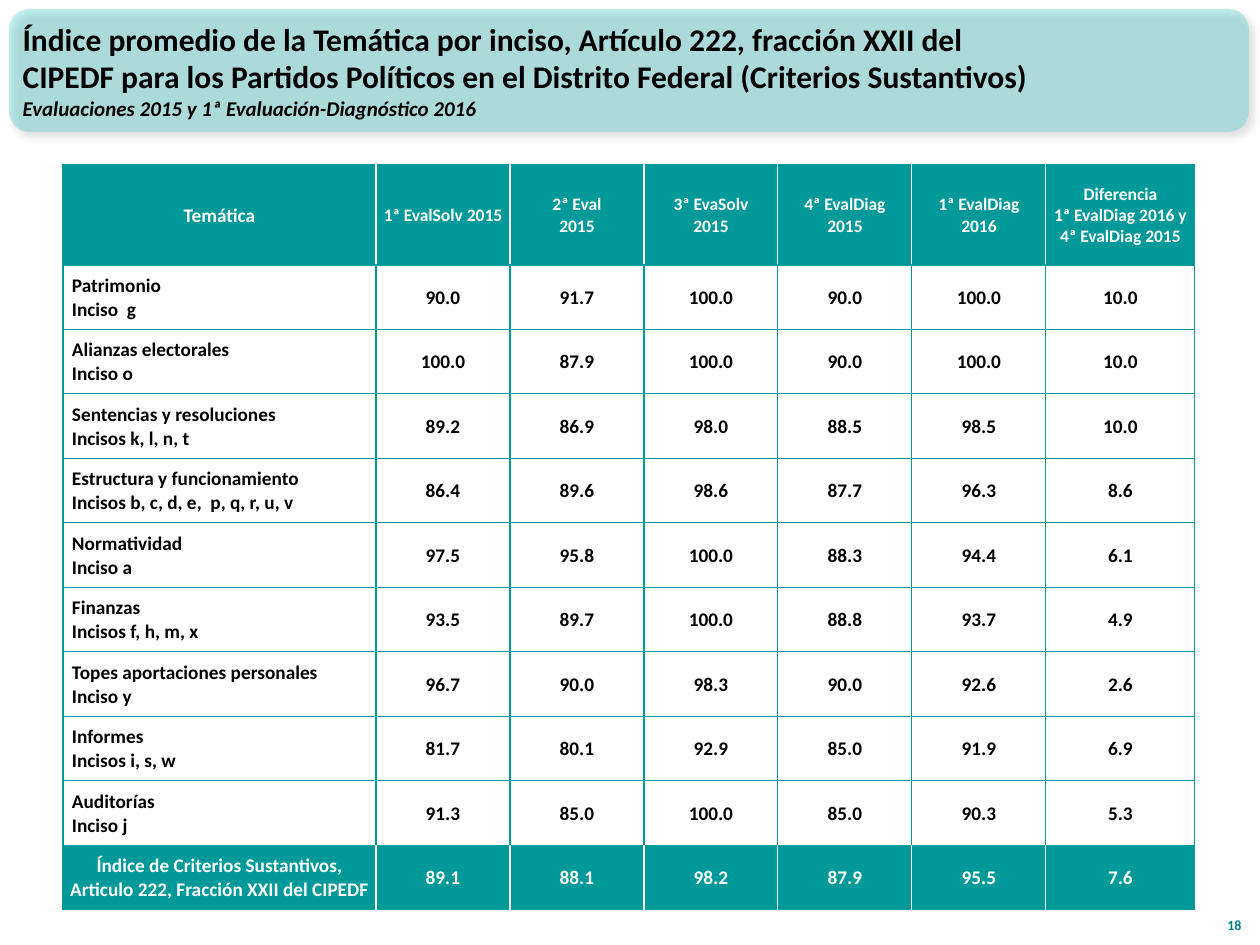
from dataclasses import dataclass

from lxml.etree import SubElement
from pptx import Presentation
from pptx.dml.color import RGBColor
from pptx.enum.shapes import MSO_SHAPE
from pptx.enum.text import MSO_ANCHOR, PP_ALIGN
from pptx.oxml.ns import qn
from pptx.util import Pt

EMU_PER_PX = 914400 / 126


@dataclass(frozen=True)
class Theme:
    font: str = "Calibri"
    teal: str = "009999"
    banner: str = "33CCCC"
    number: str = "008080"
    black: str = "000000"
    white: str = "FFFFFF"
    title_size: int = 18
    subtitle_size: int = 12
    body_size: int = 11
    header_size: int = 10
    number_size: int = 8
    border: float = 0.75


THEME = Theme()

TITLE = ("Índice promedio de la Temática por inciso, Artículo 222, fracción XXII del "
         "CIPEDF para los Partidos Políticos en el Distrito Federal (Criterios Sustantivos)")
SUBTITLE = "Evaluaciones 2015 y 1ª Evaluación-Diagnóstico 2016"

HEADERS = ["Temática", "1ª EvalSolv 2015", "2ª Eval\n2015", "3ª EvaSolv\n2015",
           "4ª EvalDiag\n2015", "1ª EvalDiag\n2016",
           "Diferencia\n1ª EvalDiag 2016 y\n4ª EvalDiag 2015"]
TOPICS = [
    ("Patrimonio\nInciso  g", 90.0, 91.7, 100.0, 90.0, 100.0, 10.0),
    ("Alianzas electorales\nInciso o", 100.0, 87.9, 100.0, 90.0, 100.0, 10.0),
    ("Sentencias y resoluciones\nIncisos k, l, n, t", 89.2, 86.9, 98.0, 88.5, 98.5, 10.0),
    ("Estructura y funcionamiento\nIncisos b, c, d, e,  p, q, r, u, v",
     86.4, 89.6, 98.6, 87.7, 96.3, 8.6),
    ("Normatividad\nInciso a", 97.5, 95.8, 100.0, 88.3, 94.4, 6.1),
    ("Finanzas\nIncisos f, h, m, x", 93.5, 89.7, 100.0, 88.8, 93.7, 4.9),
    ("Topes aportaciones personales\nInciso y", 96.7, 90.0, 98.3, 90.0, 92.6, 2.6),
    ("Informes\nIncisos i, s, w", 81.7, 80.1, 92.9, 85.0, 91.9, 6.9),
    ("Auditorías\nInciso j", 91.3, 85.0, 100.0, 85.0, 90.3, 5.3),
]
TOTAL = ("Índice de Criterios Sustantivos,\nArticulo 222, Fracción XXII del CIPEDF",
         89.1, 88.1, 98.2, 87.9, 95.5, 7.6)


def px(length):
    return round(length * EMU_PER_PX)


def format_paragraph(para, size, color, align, italic=False):
    para.alignment = align
    font = para.font
    font.name, font.size, font.bold, font.italic = THEME.font, Pt(size), True, italic
    font.color.rgb = RGBColor.from_string(color)


def add_banner(page, left, top, width, height):
    """Translucent rounded panel with a soft shadow, and the title over it."""
    panel = page.shapes.add_shape(MSO_SHAPE.ROUNDED_RECTANGLE,
                                  px(left), px(top), px(width), px(height))
    panel.line.fill.background()
    panel.fill.solid()
    panel.fill.fore_color.rgb = RGBColor.from_string(THEME.banner)
    properties = panel._element.spPr
    fill_color = properties.find(qn("a:solidFill")).find(qn("a:srgbClr"))
    SubElement(fill_color, qn("a:alpha"), val="30000")
    effects = SubElement(properties, qn("a:effectLst"))
    shadow = SubElement(effects, qn("a:outerShdw"), blurRad=str(Pt(4)), dist=str(Pt(3)),
                        dir="2700000", algn="tl", rotWithShape="0")
    shadow_color = SubElement(shadow, qn("a:srgbClr"), val=THEME.black)
    SubElement(shadow_color, qn("a:alpha"), val="40000")

    # Title and subtitle share the title placeholder, brought above the panel
    title = page.shapes.title
    page.shapes._spTree.append(title._element)
    title.left, title.top = px(left + 1), px(top + 2)
    title.width, title.height = px(1042), px(height - 5)
    frame = title.text_frame
    frame.word_wrap = True
    frame.vertical_anchor = MSO_ANCHOR.MIDDLE
    frame.text = f"{TITLE}\n{SUBTITLE}"
    heading, subtitle = frame.paragraphs
    format_paragraph(heading, THEME.title_size, THEME.black, PP_ALIGN.LEFT)
    format_paragraph(subtitle, THEME.subtitle_size, THEME.black, PP_ALIGN.LEFT, italic=True)


def set_borders(cell, colors):
    properties = cell._tc.get_or_add_tcPr()
    for side, color in zip("LRTB", colors):
        line = SubElement(properties, qn(f"a:ln{side}"), w=str(Pt(THEME.border)))
        SubElement(SubElement(line, qn("a:solidFill")), qn("a:srgbClr"), val=color)


def fill_cell(cell, text, size, align, accented, first, last):
    inner = THEME.white if accented else THEME.teal
    set_borders(cell, (THEME.teal if first else inner, THEME.teal if last else inner,
                       THEME.teal, THEME.teal))
    if accented:
        cell.fill.solid()
        cell.fill.fore_color.rgb = RGBColor.from_string(THEME.teal)
    else:
        cell.fill.background()
    cell.vertical_anchor = MSO_ANCHOR.MIDDLE
    cell.margin_left = px(9 if align == PP_ALIGN.LEFT else 1)
    cell.margin_right = cell.margin_top = px(1)
    cell.margin_bottom = 0
    cell.text = text
    for para in cell.text_frame.paragraphs:
        format_paragraph(para, size, THEME.white if accented else THEME.black, align)


def add_index_table(page, left, top, width, height):
    """Scores by topic: accented header and total rows around plain rows."""
    rows = [HEADERS, *TOPICS, TOTAL]
    table = page.shapes.add_table(len(rows), len(HEADERS), px(left), px(top),
                                  px(width), px(height)).table
    table.first_row = table.horz_banding = False

    # The topic and difference columns are wider; the rest are equal
    topic_width, difference_width, header_height = 313, 149, 100
    score_count = len(HEADERS) - 2
    score_width = (width - topic_width - difference_width) / score_count
    widths = [topic_width, *[score_width] * score_count, difference_width]
    for column, column_width in zip(table.columns, widths):
        column.width = px(column_width)
    row_height = (height - header_height) / (len(rows) - 1)
    for index, row in enumerate(table.rows):
        row.height = px(row_height if index else header_height)

    for row_index, values in enumerate(rows):
        is_header = row_index == 0
        accented = is_header or values is TOTAL
        for column_index, value in enumerate(values):
            first = column_index == 0
            fill_cell(table.cell(row_index, column_index),
                      value if isinstance(value, str) else f"{value:.1f}",
                      THEME.header_size if is_header and not first else THEME.body_size,
                      PP_ALIGN.LEFT if first and not accented else PP_ALIGN.CENTER,
                      accented, first, column_index == len(values) - 1)


def add_page_number(page, left, top, width, height):
    box = page.shapes.add_textbox(px(left), px(top), px(width), px(height))
    frame = box.text_frame
    frame.word_wrap = True
    frame.vertical_anchor = MSO_ANCHOR.BOTTOM
    frame.text = "18"
    format_paragraph(frame.paragraphs[0], THEME.number_size, THEME.number, PP_ALIGN.RIGHT)


def main():
    deck = Presentation()
    deck.slide_width, deck.slide_height = px(1260), px(945)
    page = deck.slides.add_slide(deck.slide_layouts[5])
    add_banner(page, 9, 9, 1240, 123)
    add_index_table(page, 63, 165, 1132, 745)
    add_page_number(page, 1203, 890, 51, 50)
    deck.save("out.pptx")


if __name__ == "__main__":
    main()
